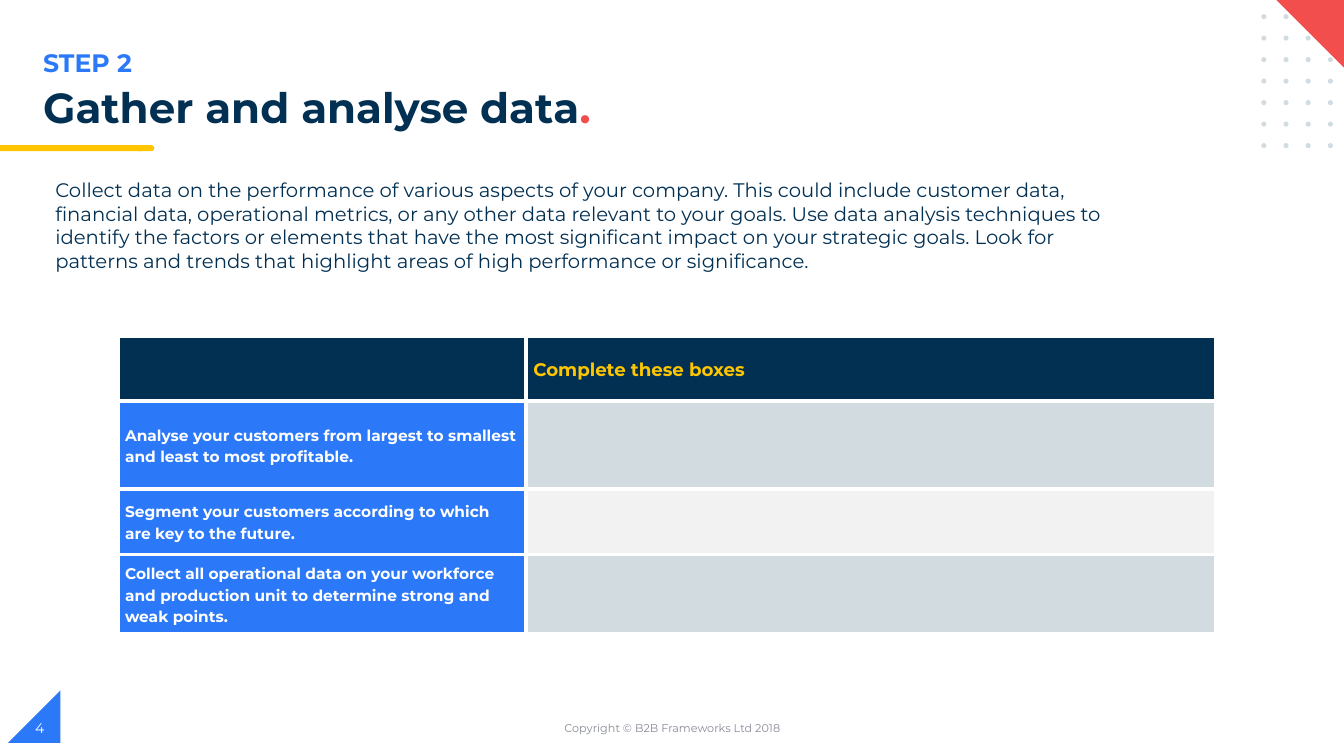
import pptx
import pptx.dml.color
import pptx.enum.shapes
import pptx.enum.text
import pptx.oxml
import pptx.oxml.ns
import pptx.util

Inches = pptx.util.Inches
RGBColor = pptx.dml.color.RGBColor
Form = pptx.enum.shapes.MSO_SHAPE
Align = pptx.enum.text.PP_ALIGN
Anchor = pptx.enum.text.MSO_ANCHOR

NAVY = RGBColor(0x02, 0x30, 0x53)
BLUE = RGBColor(0x2B, 0x79, 0xF8)
YELLOW = RGBColor(0xFF, 0xC6, 0x00)
RED = RGBColor(0xF2, 0x4E, 0x4E)
MIST = RGBColor(0xD1, 0xDB, 0xE0)
PALE = RGBColor(0xF2, 0xF2, 0xF2)
GREY = RGBColor(0x88, 0x8C, 0x97)
WHITE = RGBColor(0xFF, 0xFF, 0xFF)


class Page:
    font = "Montserrat"

    def __init__(self, slide):
        self.slide = slide

    def style(self, run, size, color, bold=False):
        run.font.name = self.font
        run.font.size = pptx.util.Pt(size)
        run.font.color.rgb = color
        run.font.bold = bold

    def shape(self, form, left, top, width, height, color):
        shape = self.slide.shapes.add_shape(
            form, Inches(left), Inches(top), Inches(width), Inches(height))
        shape.shadow.inherit = False
        shape.fill.solid()
        shape.fill.fore_color.rgb = color
        shape.line.fill.background()
        return shape

    def text(self, words, left, top, width, height, size, color, bold=False,
             align=Align.LEFT, anchor=Anchor.TOP):
        box = self.slide.shapes.add_textbox(
            Inches(left), Inches(top), Inches(width), Inches(height))
        frame = box.text_frame
        frame.word_wrap = True
        frame.vertical_anchor = anchor
        frame.text = words
        line = frame.paragraphs[0]
        line.alignment = align
        self.style(line.runs[0], size, color, bold)
        return line

    def border(self, cell, color, points):
        props = cell._tc.get_or_add_tcPr()
        for place, side in enumerate(("lnL", "lnR", "lnT", "lnB")):
            props.insert(place, pptx.oxml.parse_xml(
                f'<a:{side} {pptx.oxml.ns.nsdecls("a")} w="{points * 12700}">'
                f'<a:solidFill><a:srgbClr val="{color}"/></a:solidFill></a:{side}>'))

    def cell(self, cell, words, size, color, fill):
        cell.fill.solid()
        cell.fill.fore_color.rgb = fill
        self.border(cell, WHITE, 3)
        cell.margin_left = cell.margin_right = Inches(0.07)
        cell.margin_top = cell.margin_bottom = 0
        cell.vertical_anchor = Anchor.MIDDLE
        if words:
            cell.text_frame.text = words
            line = cell.text_frame.paragraphs[0]
            line.line_spacing = 1.15
            self.style(line.runs[0], size, color, True)

    def table(self, left, top, widths, heights, rows):
        grid = self.slide.shapes.add_table(
            len(heights), len(widths), Inches(left), Inches(top),
            Inches(sum(widths)), Inches(sum(heights))).table
        for column, width in zip(grid.columns, widths):
            column.width = Inches(width)
        for row, height, cells in zip(grid.rows, heights, rows):
            row.height = Inches(height)
            for cell, look in zip(row.cells, cells):
                self.cell(cell, *look)


def main():
    deck = pptx.Presentation()
    deck.slide_width = Inches(13.33)
    deck.slide_height = Inches(7.5)
    page = Page(deck.slides.add_slide(deck.slide_layouts[6]))

    # Dot grid and corner triangles
    for row in range(7):
        for col in range(4):
            page.shape(Form.OVAL, 12.51 + 0.22 * col, 0.14 + 1.28 / 6 * row,
                       0.05, 0.05, MIST)
    corner = page.shape(Form.RIGHT_TRIANGLE, 12.65, -0.01, 0.72, 0.72, RED)
    corner.rotation = 180
    badge = page.shape(Form.RIGHT_TRIANGLE, 0.08, 6.85, 0.52, 0.52, BLUE)
    badge.element.spPr.xfrm.set("flipH", "1")

    # Heading with its underline
    page.shape(Form.FLOWCHART_TERMINATOR, 1.34, 1.44, 0.19, 0.06, YELLOW)
    page.shape(Form.RECTANGLE, 0, 1.44, 1.41, 0.06, YELLOW)
    page.text("STEP 2", 0.33, 0.42, 6.69, 0.4, 18, BLUE, True)
    title = page.text("Gather and analyse data", 0.33, 0.82, 11.15, 0.56,
                      30, NAVY, True)
    title.line_spacing = 0.9
    stop = title.add_run()
    stop.text = "."
    page.style(stop, 30, RED, True)

    # Introduction
    page.text(
        "Collect data on the performance of various aspects of your company. "
        "This could include customer data, financial data, operational metrics, "
        "or any other data relevant to your goals. Use data analysis techniques "
        "to identify the factors or elements that have the most significant "
        "impact on your strategic goals. Look for patterns and trends that "
        "highlight areas of high performance or significance.",
        0.45, 1.72, 10.89, 1.04, 14, NAVY)

    # Worksheet table
    tasks = (
        ("Analyse your customers from largest to smallest and least to most "
         "profitable.", MIST),
        ("Segment your customers according to which are key to the future.", PALE),
        ("Collect all operational data on your workforce and production unit to "
         "determine strong and weak points.", MIST),
    )
    rows = [[("", 13, YELLOW, NAVY), ("Complete these boxes", 13, YELLOW, NAVY)]]
    rows += [[(task, 11, WHITE, BLUE), ("", 11, NAVY, fill)] for task, fill in tasks]
    page.table(1.17, 3.33, (4.05, 6.84), (0.65, 0.87, 0.65, 0.79), rows)

    # Footer
    page.text("Copyright © B2B Frameworks Ltd 2018", 4.42, 7.02, 4.5, 0.4,
              8, GREY, align=Align.CENTER, anchor=Anchor.MIDDLE)
    page.text("4", 0.25, 7.02, 3, 0.4, 10, WHITE, anchor=Anchor.MIDDLE)

    deck.save("out.pptx")


if __name__ == "__main__":
    main()
